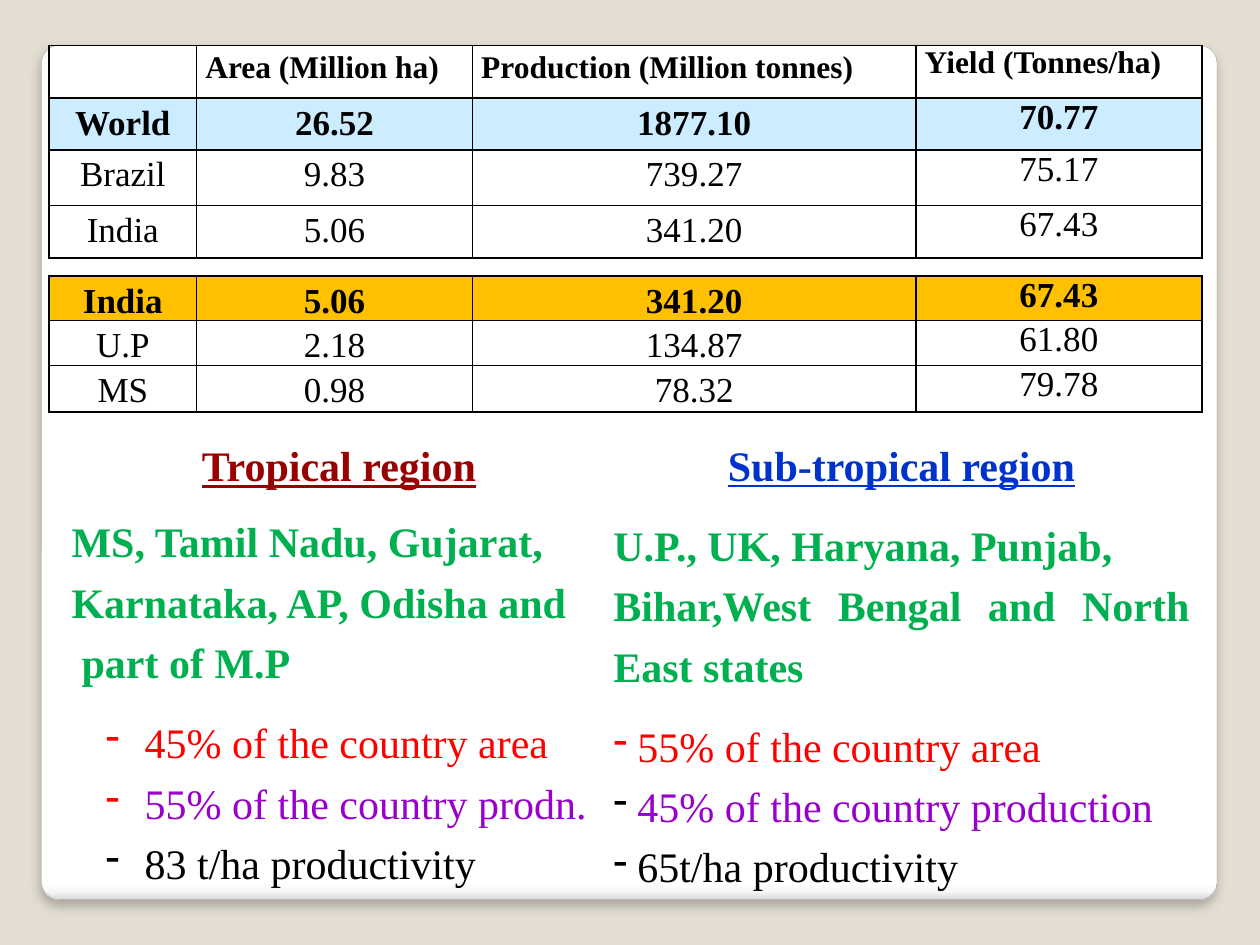
from dataclasses import dataclass
from typing import Optional

from lxml.etree import SubElement
from pptx import Presentation
from pptx.dml.color import RGBColor
from pptx.enum.shapes import MSO_SHAPE
from pptx.enum.text import PP_ALIGN
from pptx.oxml import parse_xml
from pptx.oxml.ns import nsdecls, qn
from pptx.util import Inches, Pt

FONT = "Times New Roman"
BLACK, GREEN, RED, PURPLE = "000000", "00B050", "FF0000", "9900CC"
COL_WIDTHS = [1.17, 2.19, 3.52, 2.27]


@dataclass
class DataTable:
    top: float
    heights: list[float]
    rows: list[list[str]]
    bold_row: int
    bold_fill: str
    has_header: bool = False


@dataclass
class Line:
    text: str
    color: str
    bold: bool = True
    underline: bool = False
    align: PP_ALIGN = PP_ALIGN.JUSTIFY
    spacing: float = 1.2
    before: float = 0
    margin: float = 0
    hang: float = 0
    bullet: Optional[str] = None  # colour of the dash


@dataclass
class Region:
    left: float
    top: float
    width: float
    height: float
    lines: list[Line]


def rgb(value: str) -> RGBColor:
    return RGBColor.from_string(value)


def set_font(p, size: float, color: str, bold: bool) -> None:
    p.font.name, p.font.size, p.font.bold = FONT, Pt(size), bold
    p.font.color.rgb = rgb(color)


def add_panel(s) -> None:
    sp = s.shapes.add_shape(MSO_SHAPE.ROUNDED_RECTANGLE, Inches(0.33), Inches(0.36),
                            Inches(9.33), Inches(6.78))
    sp.adjustments[0] = 0.021
    sp.line.color.rgb = rgb("A4A4A4")
    sp.line.width = Pt(0.16)
    stops = [(0, "FFFFFF"), (98, "FFFFFF"), (99, "F7F7F7"), (100, "DADADA")]
    stop_xml = "".join(f'<a:gs pos="{pos * 1000}"><a:srgbClr val="{c}"/></a:gs>'
                       for pos, c in stops)
    props = sp.fill._xPr
    props.find(qn("a:prstGeom")).addnext(parse_xml(
        f'<a:gradFill {nsdecls("a")}><a:gsLst>{stop_xml}</a:gsLst>'
        '<a:lin ang="5400000" scaled="0"/></a:gradFill>'))
    props.append(parse_xml(
        f'<a:effectLst {nsdecls("a")}><a:outerShdw blurRad="{Pt(6)}" dist="{Pt(4)}" '
        'dir="5400000" algn="t" rotWithShape="0"><a:srgbClr val="000000">'
        '<a:alpha val="25000"/></a:srgbClr></a:outerShdw></a:effectLst>'))


def set_borders(cell) -> None:
    props = cell._tc.get_or_add_tcPr()
    for i, side in enumerate(("lnL", "lnR", "lnT", "lnB")):
        props.insert(i, parse_xml(
            f'<a:{side} {nsdecls("a")} w="{Pt(1)}"><a:solidFill>'
            f'<a:srgbClr val="{BLACK}"/></a:solidFill></a:{side}>'))


def add_data_table(s, data: DataTable) -> None:
    table = s.shapes.add_table(
        len(data.rows), len(COL_WIDTHS), Inches(0.39), Inches(data.top),
        Inches(sum(COL_WIDTHS)), Inches(sum(data.heights))).table
    table.first_row = table.horz_banding = False
    for column, width in zip(table.columns, COL_WIDTHS):
        column.width = Inches(width)
    for r, values in enumerate(data.rows):
        table.rows[r].height = Inches(data.heights[r])
        header = data.has_header and r == 0
        for c, value in enumerate(values):
            cell = table.cell(r, c)
            cell.margin_left = cell.margin_right = Inches(0.07)
            cell.margin_top = cell.margin_bottom = 0
            if r == data.bold_row:
                cell.fill.solid()
                cell.fill.fore_color.rgb = rgb(data.bold_fill)
            else:
                cell.fill.background()
            set_borders(cell)
            last = c == len(COL_WIDTHS) - 1
            p = cell.text_frame.paragraphs[0]
            p.text = value
            p.line_spacing = 1.0 if last else 1.15
            p.alignment = PP_ALIGN.CENTER
            if header:
                p.alignment = PP_ALIGN.LEFT if last else PP_ALIGN.JUSTIFY
            set_font(p, 18 if header else 20, BLACK, header or r == data.bold_row)


def add_region(s, region: Region) -> None:
    tf = s.shapes.add_textbox(Inches(region.left), Inches(region.top),
                              Inches(region.width), Inches(region.height)).text_frame
    tf.word_wrap = True
    for i, line in enumerate(region.lines):
        p = tf.paragraphs[0] if i == 0 else tf.add_paragraph()
        p.text = line.text
        p.alignment, p.line_spacing = line.align, line.spacing
        p.space_before = Pt(line.before)
        set_font(p, 24, line.color, line.bold)
        p.font.underline = line.underline
        props = p._p.get_or_add_pPr()
        props.set("marL", str(Inches(line.margin)))
        props.set("indent", str(-Inches(line.hang)))
        if line.bullet:
            color = parse_xml(f'<a:buClr {nsdecls("a")}><a:srgbClr val="{line.bullet}"/></a:buClr>')
            props.find(qn("a:defRPr")).addprevious(color)
            char = SubElement(props, qn("a:buChar"), char="-")
            color.addnext(char)


def facts(items: list[tuple[str, str, str]], margin: float, hang: float) -> list[Line]:
    return [Line(text, color, bold=False, before=0 if i else 11,
                 margin=margin, hang=hang, bullet=bullet)
            for i, (text, color, bullet) in enumerate(items)]


TABLES = [
    DataTable(0.36, [0.42, 0.41, 0.44, 0.42], [
        ["", "Area (Million ha)", "Production (Million tonnes)", "Yield (Tonnes/ha)"],
        ["World", "26.52", "1877.10", "70.77"],
        ["Brazil", "9.83", "739.27", "75.17"],
        ["India", "5.06", "341.20", "67.43"],
    ], bold_row=1, bold_fill="CCECFF", has_header=True),
    DataTable(2.19, [0.35, 0.35, 0.37], [
        ["India", "5.06", "341.20", "67.43"],
        ["U.P", "2.18", "134.87", "61.80"],
        ["MS", "0.98", "78.32", "79.78"],
    ], bold_row=0, bold_fill="FFC000"),
]

REGIONS = [
    Region(0.47, 3.44, 4.44, 4.05, [
        Line("Tropical region", "990000", underline=True, align=PP_ALIGN.CENTER, spacing=1.0),
        Line("MS, Tamil Nadu, Gujarat,", GREEN, before=9),
        Line("Karnataka, AP, Odisha and", GREEN),
        Line("part of M.P", GREEN, margin=0.08),
        *facts([("45% of the country area", RED, RED),
                ("55% of the country prodn.", PURPLE, RED),
                ("83 t/ha productivity", BLACK, BLACK)], margin=0.58, hang=0.31),
    ]),
    Region(4.77, 3.36, 4.77, 3.82, [
        Line("Sub-tropical region", "0033CC", underline=True, align=PP_ALIGN.CENTER),
        Line("U.P., UK, Haryana, Punjab,", GREEN, before=11),
        Line("Bihar,West Bengal and North East states", GREEN),
        *facts([("55% of the country area", RED, RED),
                ("45% of the country production", PURPLE, BLACK),
                ("65t/ha productivity", BLACK, BLACK)], margin=0.19, hang=0.19),
    ]),
]


def main() -> None:
    prs = Presentation()
    prs.slide_width, prs.slide_height = Inches(10), Inches(7.5)
    s = prs.slides.add_slide(prs.slide_layouts[6])
    s.background.fill.solid()
    s.background.fill.fore_color.rgb = rgb("E3DED1")

    # White panel behind everything
    add_panel(s)
    # Area, production and yield
    for data in TABLES:
        add_data_table(s, data)
    # Growing regions
    for region in REGIONS:
        add_region(s, region)

    prs.save("out.pptx")


if __name__ == "__main__":
    main()
